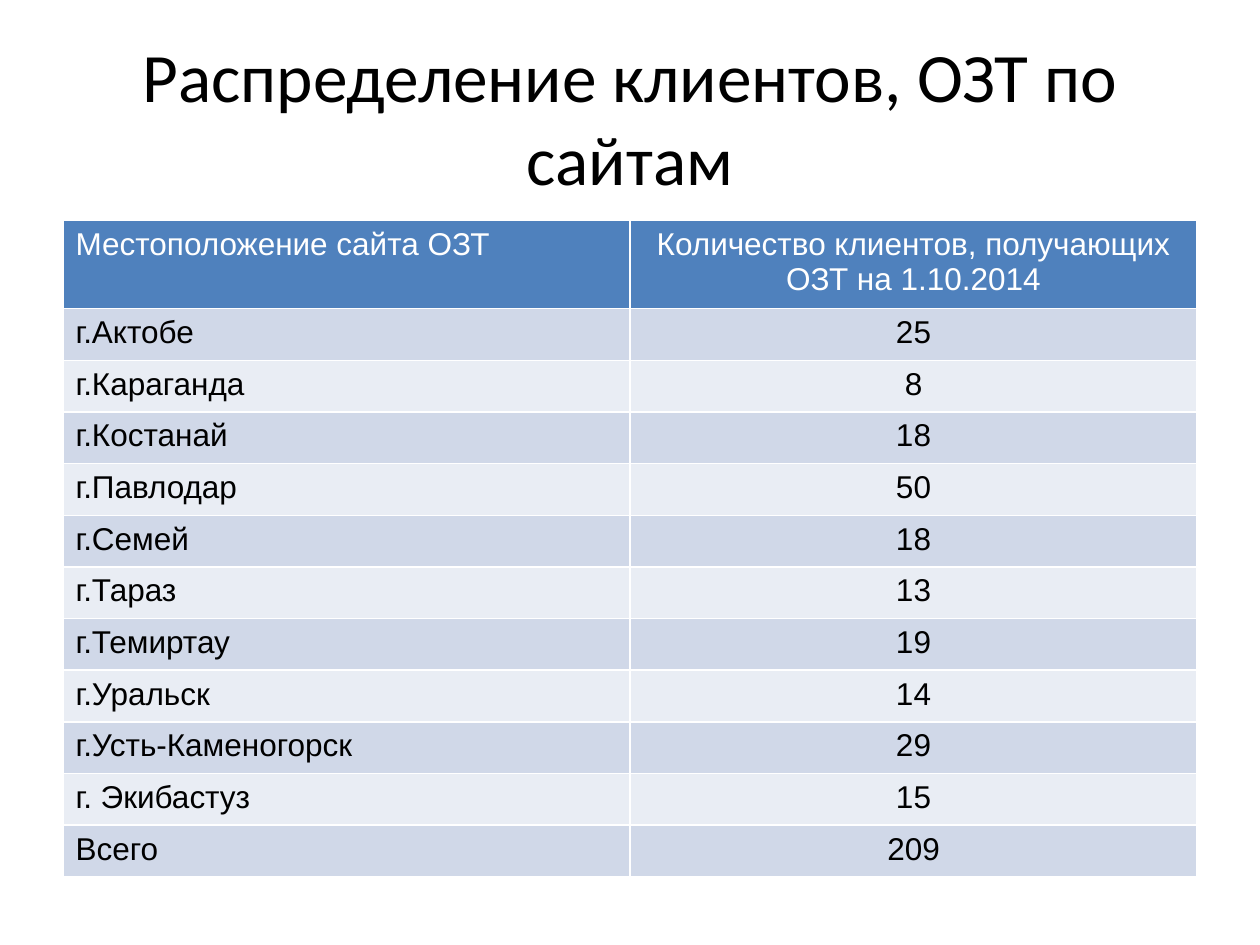
from pptx import Presentation
from pptx.dml.color import RGBColor
from pptx.enum import text
from pptx.util import Inches, Pt

TITLE = "Распределение клиентов, ОЗТ по сайтам"
HEADER = ("Местоположение сайта ОЗТ", "Количество клиентов, получающих ОЗТ на 1.10.2014")
CLIENTS = [
    ("г.Актобе", 25),
    ("г.Караганда", 8),
    ("г.Костанай", 18),
    ("г.Павлодар", 50),
    ("г.Семей", 18),
    ("г.Тараз", 13),
    ("г.Темиртау", 19),
    ("г.Уральск", 14),
    ("г.Усть-Каменогорск", 29),
    ("г. Экибастуз", 15),
    ("Всего", 209),
]

BLACK = RGBColor(0x00, 0x00, 0x00)
WHITE = RGBColor(0xFF, 0xFF, 0xFF)
BLUE = RGBColor(0x4F, 0x81, 0xBD)
BANDS = (RGBColor(0xE9, 0xED, 0xF4), RGBColor(0xD0, 0xD8, 0xE8))

LEFT, WIDTH = 0.5, 9
HEADER_HEIGHT, ROW_HEIGHT = 0.65, 0.41


def write(frame, content, font_name, size, color, align):
    frame.text = content
    paragraph = frame.paragraphs[0]
    paragraph.alignment = align
    font = paragraph.runs[0].font
    font.name, font.size, font.bold = font_name, Pt(size), False
    font.color.rgb = color


def add_title(slide):
    title = slide.shapes.add_textbox(Inches(LEFT), Inches(0.3), Inches(WIDTH), Inches(1.25))
    frame = title.text_frame
    frame.word_wrap = True
    frame.vertical_anchor = text.MSO_ANCHOR.MIDDLE
    write(frame, TITLE, "Calibri", 39.6, BLACK, text.PP_ALIGN.CENTER)


def add_client_table(slide):
    rows = [HEADER] + CLIENTS
    height = HEADER_HEIGHT + ROW_HEIGHT * len(CLIENTS)
    table = slide.shapes.add_table(len(rows), len(HEADER), Inches(LEFT), Inches(1.75),
                                   Inches(WIDTH), Inches(height)).table
    aligns = (text.PP_ALIGN.LEFT, text.PP_ALIGN.CENTER)
    for r, row in enumerate(rows):
        is_header = r == 0
        table.rows[r].height = Inches(HEADER_HEIGHT if is_header else ROW_HEIGHT)
        for c, value in enumerate(row):
            cell = table.cell(r, c)
            cell.fill.solid()
            cell.fill.fore_color.rgb = BLUE if is_header else BANDS[r % 2]
            write(cell.text_frame, str(value), "Arial", 18,
                  WHITE if is_header else BLACK, aligns[c])


def main():
    presentation = Presentation()
    presentation.slide_width, presentation.slide_height = Inches(10), Inches(7.5)
    slide = presentation.slides.add_slide(presentation.slide_layouts[6])
    add_title(slide)
    add_client_table(slide)
    presentation.save("out.pptx")


if __name__ == "__main__":
    main()
